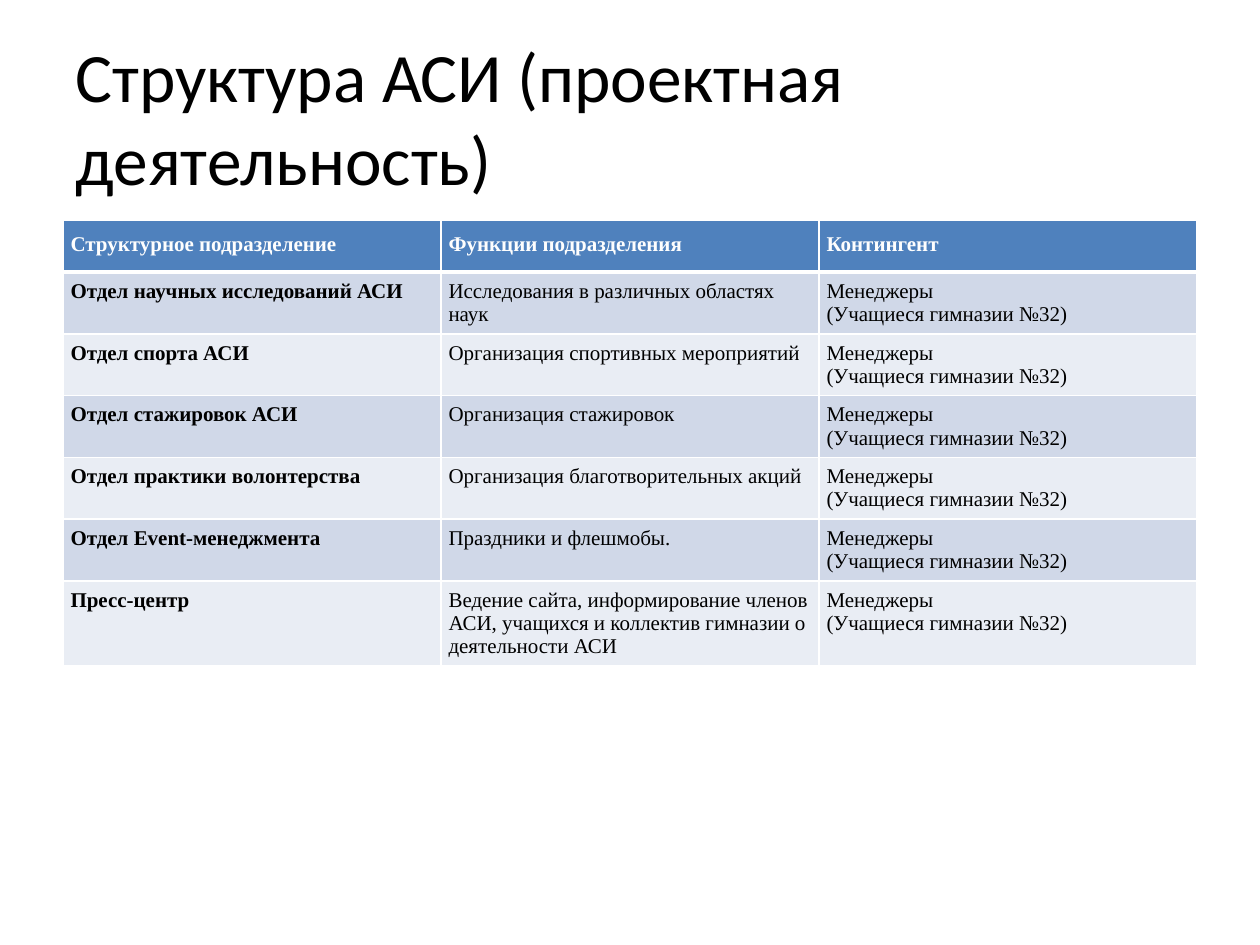
from lxml import etree
from pptx import Presentation
from pptx.dml.color import RGBColor
from pptx.enum.text import MSO_ANCHOR, PP_ALIGN
from pptx.oxml.ns import qn
from pptx.util import Inches, Pt

LEFT = PP_ALIGN.LEFT
MIDDLE = MSO_ANCHOR.MIDDLE
TITLE_ONLY = 5

BLACK = RGBColor(0x00, 0x00, 0x00)
WHITE = RGBColor(0xFF, 0xFF, 0xFF)
HEADER_TEXT = RGBColor(0xFE, 0xFE, 0xFE)
HEADER_FILL = RGBColor(0x4F, 0x81, 0xBD)
BAND_FILLS = (RGBColor(0xD0, 0xD8, 0xE8), RGBColor(0xE9, 0xED, 0xF4))

TITLE = "Структура АСИ (проектная деятельность)"
HEADERS = ("Структурное подразделение", "Функции подразделения", "Контингент")
STAFF = "Менеджеры\n(Учащиеся гимназии №32)"
DEPARTMENTS = (
    ("Отдел научных исследований АСИ", "Исследования в различных областях наук"),
    ("Отдел спорта АСИ", "Организация спортивных мероприятий"),
    ("Отдел стажировок АСИ", "Организация стажировок"),
    ("Отдел практики волонтерства", "Организация благотворительных акций"),
    ("Отдел Event-менеджмента", "Праздники и флешмобы."),
    ("Пресс-центр", "Ведение сайта, информирование членов АСИ, "
                    "учащихся и коллектив гимназии о деятельности АСИ"),
)

TITLE_FONT = {"name": "Calibri", "size": Pt(39.6)}
CELL_FONT = {"name": "Times New Roman", "size": Pt(12)}
HEADER_PARAGRAPH = {"line_spacing": 1.2, "space_before": Pt(10)}
CELL_MARGINS = {f"margin_{side}": Inches(0.06)
                for side in ("left", "top", "right", "bottom")}


def set_attrs(target, values):
    for name, value in values.items():
        setattr(target, name, value)


def set_font(font, values, color):
    set_attrs(font, values)
    font.color.rgb = color


def add_title(slide):
    title = slide.shapes.title
    set_attrs(title, {"left": Inches(0.5), "top": Inches(0.3),
                      "width": Inches(9), "height": Inches(1.25)})
    tf = title.text_frame
    tf.text = TITLE
    set_attrs(tf, {"vertical_anchor": MIDDLE, "word_wrap": True})
    p = tf.paragraphs[0]
    p.alignment = LEFT
    set_font(p.runs[0].font, TITLE_FONT, BLACK)


def set_borders(cell, widths):
    tc_pr = cell._tc.get_or_add_tcPr()
    for side, width in widths.items():
        ln = etree.SubElement(tc_pr, qn(f"a:ln{side}"), w=str(Pt(width)))
        fill = etree.SubElement(ln, qn("a:solidFill"))
        etree.SubElement(fill, qn("a:srgbClr"), val=str(WHITE))


def format_cell(cell, text, row, col):
    is_header = row == 0
    cell.text = text
    set_attrs(cell, CELL_MARGINS)
    set_borders(cell, {"L": 1, "R": 1, "T": 3 if row == 1 else 1,
                       "B": 3 if is_header else 1})
    cell.fill.solid()
    cell.fill.fore_color.rgb = HEADER_FILL if is_header else BAND_FILLS[(row - 1) % 2]
    for p in cell.text_frame.paragraphs:
        if is_header:
            set_attrs(p, HEADER_PARAGRAPH)
        for r in p.runs:
            set_font(r.font, {**CELL_FONT, "bold": is_header or col == 0},
                     HEADER_TEXT if is_header else BLACK)


def add_department_table(slide):
    rows = [HEADERS] + [(name, duty, STAFF) for name, duty in DEPARTMENTS]
    table = slide.shapes.add_table(
        len(rows), len(HEADERS), Inches(0.5), Inches(1.75),
        Inches(9), Inches(0.41 * len(rows))).table
    for i, texts in enumerate(rows):
        for j, text in enumerate(texts):
            format_cell(table.cell(i, j), text, i, j)


def main():
    prs = Presentation()
    set_attrs(prs, {"slide_width": Inches(10), "slide_height": Inches(7.5)})
    slide = prs.slides.add_slide(prs.slide_layouts[TITLE_ONLY])
    add_title(slide)
    add_department_table(slide)
    prs.save("out.pptx")


if __name__ == "__main__":
    main()
